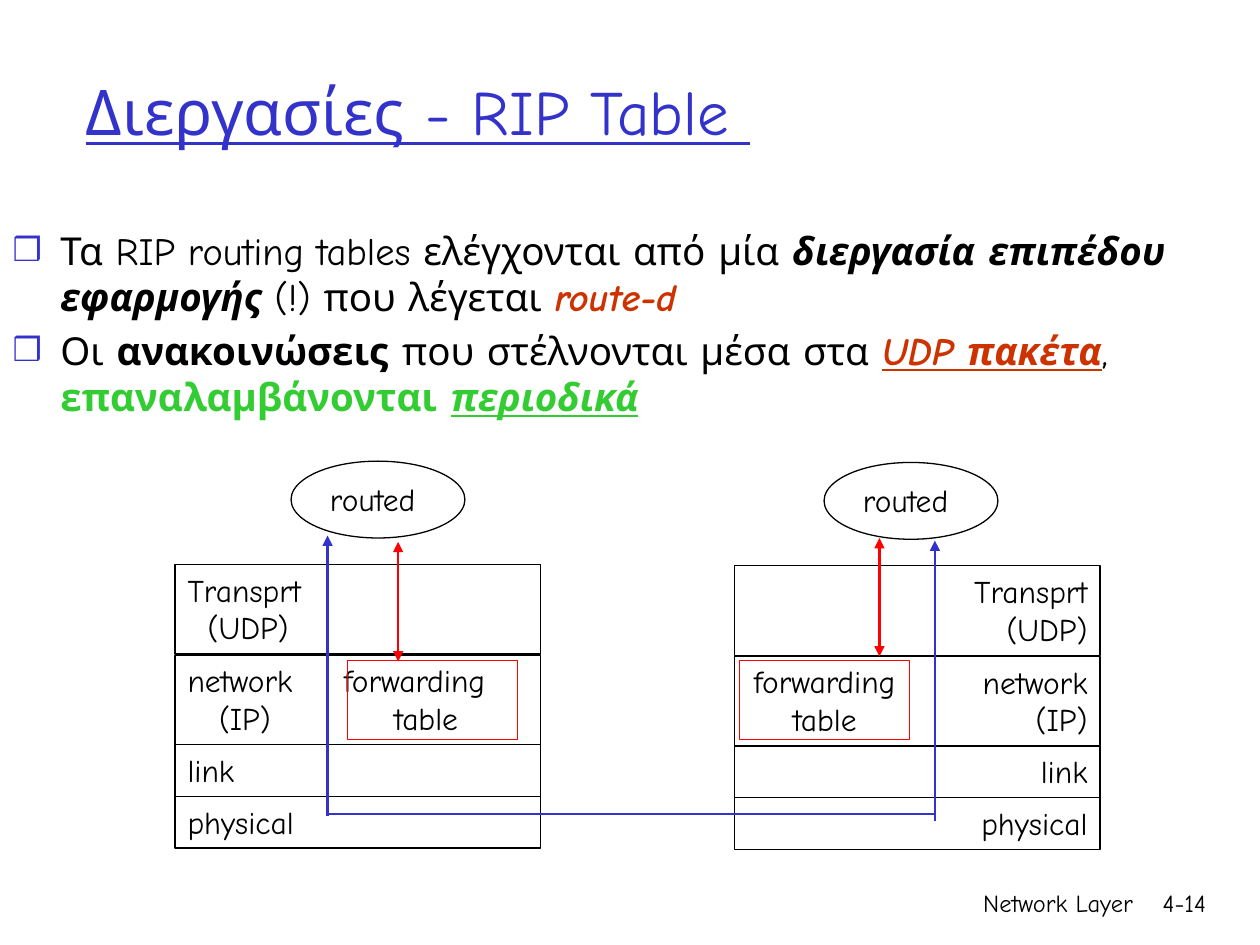
from dataclasses import dataclass

import pptx
import pptx.dml.color
import pptx.enum.shapes
import pptx.enum.text
import pptx.oxml
import pptx.oxml.ns
import pptx.util
from lxml import etree

Inches = pptx.util.Inches
Pt = pptx.util.Pt
Align = pptx.enum.text.PP_ALIGN
Anchor = pptx.enum.text.MSO_ANCHOR
Shape = pptx.enum.shapes.MSO_SHAPE

FONT = "Comic Neue"
BLACK = "000000"
BLUE = "3333CC"
RED = "FF0000"
RUST = "CC3300"
GREEN = "33CC33"


@dataclass
class Layer:
    top: float
    height: float
    left_lines: list
    right_lines: list
    tabs: tuple = ()


@dataclass
class Host:
    left: float
    top_shift: float
    oval_left: float
    table_left: float
    right_aligned: bool


@dataclass
class Line:
    start: tuple
    end: tuple
    color: str
    ends: tuple = ()


LAYERS = [
    Layer(6.32, 0.41, ["physical"], ["physical"]),
    Layer(5.91, 0.41, ["link"], ["link"]),
    Layer(5.2, 0.71, ["network\tforwarding", "\t(IP)\ttable"], ["network", "(IP)"], (0.25, 1.24, 1.64)),
    Layer(4.48, 0.71, ["Transprt", "\t(UDP)"], ["Transprt", "(UDP)"], (0.16,)),
]
HOSTS = [
    Host(1.39, 0, 2.31, 2.76, False),
    Host(5.83, 0.01, 6.54, 5.87, True),
]
LINES = [
    Line((2.6, 6.48), (2.6, 4.25), BLUE, ("tailEnd",)),
    Line((7.42, 6.52), (7.42, 4.29), BLUE, ("tailEnd",)),
    Line((2.6, 6.46), (7.43, 6.46), BLUE),
    Line((3.16, 4.3), (3.16, 5.25), RED, ("headEnd", "tailEnd")),
    Line((6.98, 4.27), (6.98, 5.21), RED, ("headEnd", "tailEnd")),
]
BULLETS = [
    [
        ("Τα RIP routing tables ελέγχονται από μία ", {}),
        ("διεργασία επιπέδου εφαρμογής", {"bold": True, "italic": True}),
        (" (!) που λέγεται ", {}),
        ("route-d", {"color": RUST, "bold": True, "italic": True}),
    ],
    [
        ("Οι ", {}),
        ("ανακοινώσεις ", {"bold": True}),
        ("που στέλνονται μέσα στα ", {}),
        ("UDP πακέτα", {"color": RUST, "bold": True, "italic": True, "underline": True}),
        (", ", {}),
        ("επαναλαμβάνονται ", {"color": GREEN, "bold": True}),
        ("περιοδικά", {"color": GREEN, "bold": True, "italic": True, "underline": True}),
    ],
]


def rgb(color: str):
    return pptx.dml.color.RGBColor.from_string(color)


def add_child(parent, tag: str, **attributes):
    child = etree.SubElement(parent, pptx.oxml.ns.qn(tag))
    for name, value in attributes.items():
        child.set(name, str(value))
    return child


def add_text(paragraph, text: str, size=18, color=BLACK, bold=False, italic=False, underline=False):
    run = paragraph.add_run()
    run.text = text
    font = run.font
    font.name = FONT
    font.size = Pt(size)
    font.bold = bold
    font.italic = italic
    font.underline = underline
    font.color.rgb = rgb(color)


def write_lines(frame, lines: list, align=Align.LEFT, size=18, tabs=()) -> None:
    for index, text in enumerate(lines):
        paragraph = frame.add_paragraph() if index else frame.paragraphs[0]
        paragraph.alignment = align
        if "\t" in text:
            # first-line labels skip the indent stop
            stops = tabs if text.startswith("\t") else tabs[1:2]
            tab_list = add_child(paragraph._p.get_or_add_pPr(), "a:tabLst")
            for stop in stops if len(stops) < 3 else (stops[0], stops[2]):
                add_child(tab_list, "a:tab", pos=Inches(stop), algn="l")
        add_text(paragraph, text, size=size)


def add_outline(slide, kind, left: float, top: float, width: float, height: float, color=BLACK):
    shape = slide.shapes.add_shape(kind, Inches(left), Inches(top), Inches(width), Inches(height))
    shape.shadow.inherit = False
    shape.fill.background()
    shape.line.color.rgb = rgb(color)
    shape.line.width = Pt(0.75)
    shape.text_frame.vertical_anchor = Anchor.TOP
    return shape


def add_label(slide, text: str, left: float, top: float, width: float, height: float,
              align=Align.LEFT, size=18, wrap=True) -> None:
    box = slide.shapes.add_textbox(Inches(left), Inches(top), Inches(width), Inches(height))
    box.text_frame.word_wrap = wrap
    write_lines(box.text_frame, [text], align, size)


def add_line(slide, line: Line) -> None:
    points = [Inches(value) for value in line.start + line.end]
    connector = slide.shapes.add_connector(pptx.enum.shapes.MSO_CONNECTOR.STRAIGHT, *points)
    connector.line.color.rgb = rgb(line.color)
    connector.line.width = Pt(1.5)
    outline = connector.line._get_or_add_ln()
    for end in line.ends:
        add_child(outline, f"a:{end}", type="triangle")
    add_child(connector._element.spPr, "a:effectLst")


def add_host(slide, host: Host) -> None:
    align = Align.RIGHT if host.right_aligned else Align.LEFT
    for layer in LAYERS:
        box = add_outline(slide, Shape.RECTANGLE, host.left, layer.top + host.top_shift, 2.9, layer.height)
        lines = layer.right_lines if host.right_aligned else layer.left_lines
        write_lines(box.text_frame, lines, align, tabs=layer.tabs)
    table = add_outline(slide, Shape.RECTANGLE, host.table_left, 5.24, 1.35, 0.63, RED)
    if host.right_aligned:
        table.text_frame.vertical_anchor = Anchor.MIDDLE
        table.text_frame.word_wrap = False
        write_lines(table.text_frame, ["forwarding", "table"], Align.CENTER)
    add_outline(slide, Shape.OVAL, host.oval_left, 3.66 + host.top_shift, 1.38, 0.61)
    add_label(slide, "routed", host.oval_left + 0.21, 3.76 + host.top_shift, 0.99, 0.4, wrap=False)


def place(shape, left: float, top: float, width: float, height: float, anchor) -> None:
    shape.left, shape.top = Inches(left), Inches(top)
    shape.width, shape.height = Inches(width), Inches(height)
    shape.text_frame.auto_size = pptx.enum.text.MSO_AUTO_SIZE.NONE
    shape.text_frame.vertical_anchor = anchor


def add_bullets(body) -> None:
    for index, parts in enumerate(BULLETS):
        frame = body.text_frame
        paragraph = frame.add_paragraph() if index else frame.paragraphs[0]
        properties = paragraph._p.get_or_add_pPr()
        properties.set("marL", str(Inches(0.38)))
        properties.set("indent", str(-Inches(0.38)))
        add_child(add_child(properties, "a:spcBef"), "a:spcPct", val=20000)
        add_child(add_child(properties, "a:buClr"), "a:srgbClr", val=BLUE)
        add_child(properties, "a:buSzPct", val=85000)
        add_child(properties, "a:buChar", char="❒")
        for text, style in parts:
            add_text(paragraph, text, size=22, **style)


def main() -> None:
    presentation = pptx.Presentation()
    presentation.slide_width = Inches(10)
    presentation.slide_height = Inches(7.5)
    slide = presentation.slides.add_slide(presentation.slide_layouts[1])
    title, body = slide.placeholders
    place(title, 0.58, 0.25, 8.5, 1.25, Anchor.MIDDLE)
    title.text_frame.paragraphs[0].alignment = Align.LEFT
    add_text(title.text_frame.paragraphs[0], "Διεργασίες - RIP Table ", size=36, color=BLUE, underline=True)
    place(body, 0, 1.75, 10, 5.08, Anchor.TOP)
    add_bullets(body)
    for host in HOSTS:
        add_host(slide, host)
    for line in LINES:
        add_line(slide, line)
    add_label(slide, "Network Layer", 5.92, 7, 3.17, 0.5, Align.RIGHT, 14)
    add_label(slide, "4-14", 8.93, 7, 0.74, 0.5, Align.RIGHT, 14)
    presentation.save("out.pptx")


if __name__ == "__main__":
    main()
